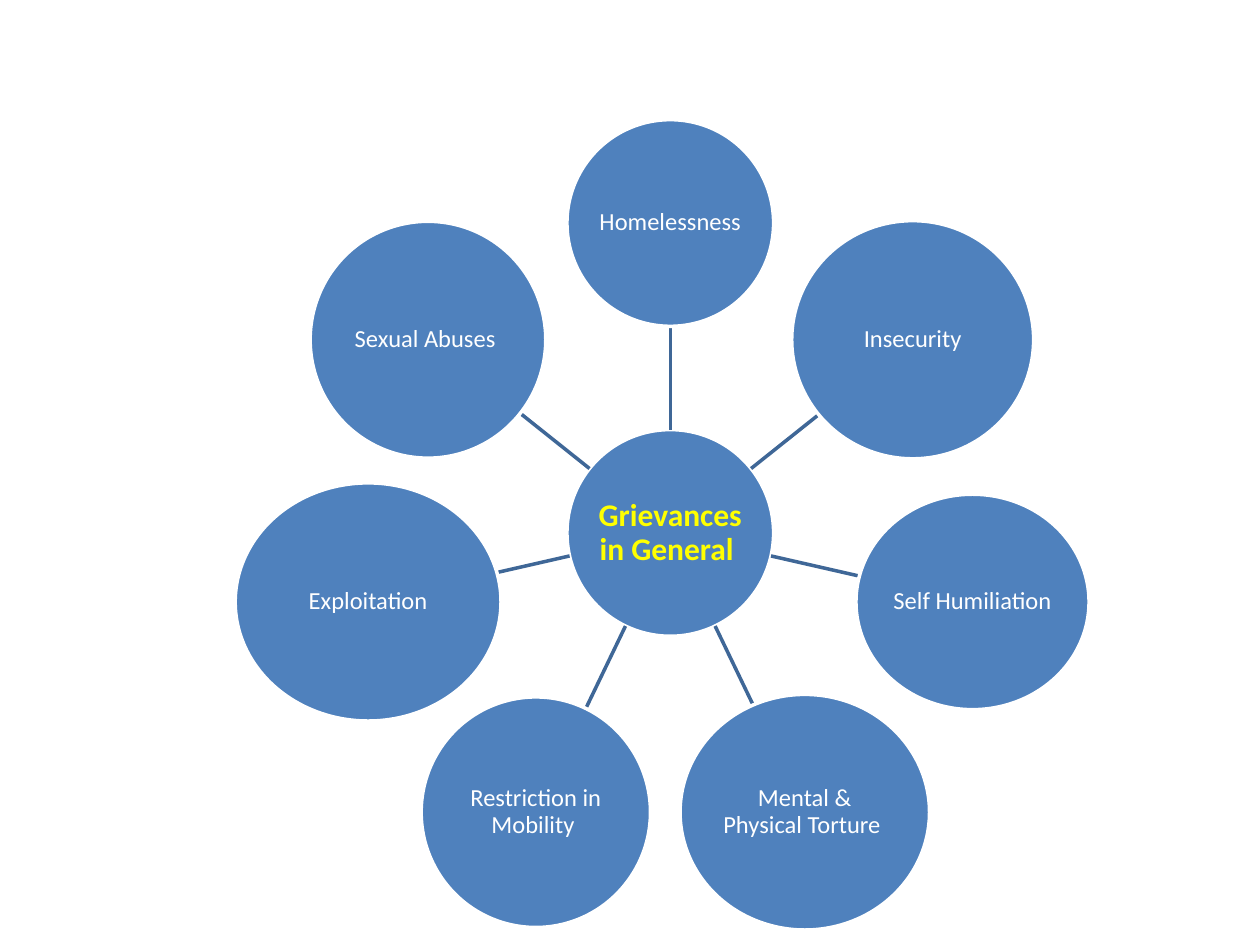
from dataclasses import dataclass
from math import cos, hypot, pi, sin

from lxml.etree import SubElement
from pptx import Presentation
from pptx.dml.color import RGBColor
from pptx.enum.shapes import MSO_CONNECTOR as Connector, MSO_SHAPE as Shape
from pptx.enum.text import MSO_ANCHOR as Anchor, PP_ALIGN as Align
from pptx.oxml.ns import qn
from pptx.slide import Slide
from pptx.util import Inches, Pt


@dataclass(frozen=True)
class Theme:
    font: str = "Calibri"
    fill: RGBColor = RGBColor(0x4F, 0x81, 0xBD)
    outline: RGBColor = RGBColor(0xFF, 0xFF, 0xFF)
    spoke: RGBColor = RGBColor(0x3F, 0x67, 0x97)
    hub_text: RGBColor = RGBColor(0xFF, 0xFF, 0x00)
    grievance_text: RGBColor = RGBColor(0xFF, 0xFF, 0xFF)
    hub_size: int = 18
    grievance_size: int = 14
    line_width: int = 2


@dataclass(frozen=True)
class Bubble:
    text: str
    width: float
    height: float


THEME = Theme()
CENTER_X, CENTER_Y = 5.32, 4.23
ORBIT = 2.46
INSET = 0.01
HUB = Bubble("Grievances in General ", 1.64, 1.64)
GRIEVANCES = [
    Bubble("Homelessness", 1.64, 1.64),
    Bubble("Insecurity", 1.92, 1.89),
    Bubble("Self Humiliation", 1.85, 1.71),
    Bubble("Mental & Physical Torture ", 1.98, 1.87),
    Bubble("Restriction in Mobility ", 1.82, 1.83),
    Bubble("Exploitation", 2.11, 1.89),
    Bubble("Sexual Abuses ", 1.87, 1.88),
]


def point_at(angle: float, radius: float) -> tuple[float, float]:
    return CENTER_X + radius * sin(angle), CENTER_Y - radius * cos(angle)


def edge_radius(bubble: Bubble, angle: float) -> float:
    return 0.5 / hypot(sin(angle) / bubble.width, cos(angle) / bubble.height)


def draw_bubble(slide: Slide, bubble: Bubble, x: float, y: float,
                size: int, color: RGBColor, bold: bool = False) -> None:
    shape = slide.shapes.add_shape(
        Shape.OVAL,
        Inches(x - bubble.width / 2), Inches(y - bubble.height / 2),
        Inches(bubble.width), Inches(bubble.height),
    )
    shape.shadow.inherit = False
    shape.fill.solid()
    shape.fill.fore_color.rgb = THEME.fill
    shape.line.color.rgb = THEME.outline
    shape.line.width = Pt(THEME.line_width)

    frame = shape.text_frame
    frame.word_wrap = True
    frame.vertical_anchor = Anchor.MIDDLE
    frame.margin_left = frame.margin_right = Inches(INSET)
    frame.margin_top = frame.margin_bottom = Inches(INSET)
    paragraph = frame.paragraphs[0]
    paragraph.text = bubble.text
    paragraph.alignment = Align.CENTER
    paragraph.line_spacing = 0.9
    paragraph.font.name = THEME.font
    paragraph.font.size = Pt(size)
    paragraph.font.bold = bold
    paragraph.font.color.rgb = color


def draw_spoke(slide: Slide, bubble: Bubble, angle: float) -> None:
    start = point_at(angle, edge_radius(HUB, angle))
    end = point_at(angle, ORBIT - edge_radius(bubble, angle))
    spoke = slide.shapes.add_connector(
        Connector.STRAIGHT, *(Inches(value) for value in start + end))
    spoke.line.color.rgb = THEME.spoke
    spoke.line.width = Pt(THEME.line_width)
    SubElement(spoke.element.spPr, qn("a:effectLst"))


def main() -> None:
    presentation = Presentation()
    presentation.slide_width = Inches(10)
    presentation.slide_height = Inches(7.5)
    slide = presentation.slides.add_slide(presentation.slide_layouts[6])

    draw_bubble(slide, HUB, CENTER_X, CENTER_Y,
                THEME.hub_size, THEME.hub_text, bold=True)
    for index, grievance in enumerate(GRIEVANCES):
        angle = 2 * pi * index / len(GRIEVANCES)
        draw_spoke(slide, grievance, angle)
        draw_bubble(slide, grievance, *point_at(angle, ORBIT),
                    THEME.grievance_size, THEME.grievance_text)

    presentation.save("out.pptx")


if __name__ == "__main__":
    main()
